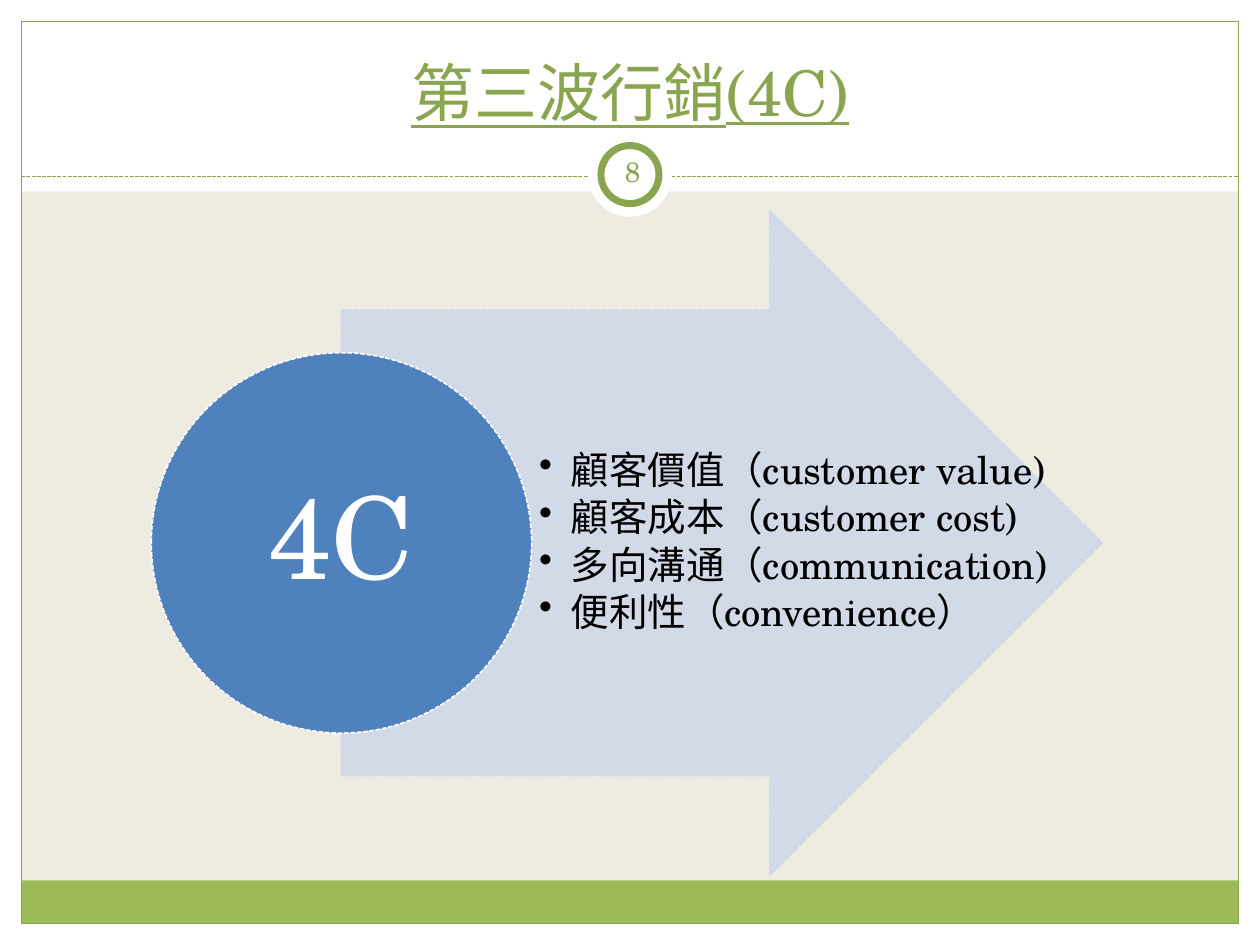
from lxml import etree
from pptx import Presentation
from pptx.dml.color import RGBColor
from pptx.enum.dml import MSO_LINE
from pptx.enum.shapes import MSO_CONNECTOR, MSO_SHAPE
from pptx.enum.text import MSO_ANCHOR, MSO_AUTO_SIZE, PP_ALIGN
from pptx.oxml.ns import qn
from pptx.util import Cm, Pt

RECTANGLE, OVAL, ARROW = MSO_SHAPE.RECTANGLE, MSO_SHAPE.OVAL, MSO_SHAPE.RIGHT_ARROW
DASH = MSO_LINE.SQUARE_DOT
CENTER, LEFT = PP_ALIGN.CENTER, PP_ALIGN.LEFT
MIDDLE, BOTTOM = MSO_ANCHOR.MIDDLE, MSO_ANCHOR.BOTTOM

FONT = "TeX Gyre Schola"
WIDTH, HEIGHT, MARGIN = 25.4, 19.05, 0.43
COLORS = {
    "paper": "EEECE1",
    "white": "FFFFFF",
    "band": "9BBB59",
    "accent": "89A54F",
    "arrow": "D0D8E8",
    "circle": "4F81BD",
    "text": "000000",
}
ITEMS = [
    "顧客價值（customer value)",
    "顧客成本（customer cost)",
    "多向溝通（communication)",
    "便利性（convenience）",
]


def color(name):
    return RGBColor.from_string(COLORS[name])


def lengths(box):
    return [Cm(value) for value in box]


def set_line(line, name, width, dash=None):
    line.color.rgb = color(name)
    line.width = Pt(width)
    if dash:
        line.dash_style = dash


def add_part(page, kind, box, fill=None, line=None):
    """Add a preset shape; line holds colour name, width and optional dash."""
    part = page.shapes.add_shape(kind, *lengths(box))
    part.shadow.inherit = False
    if fill:
        part.fill.solid()
        part.fill.fore_color.rgb = color(fill)
    else:
        part.fill.background()
    if line:
        set_line(part.line, *line)
    else:
        part.line.fill.background()
    return part


def write(shape, lines, size, ink, align=CENTER, anchor=MIDDLE,
          insets=(0.13, 0.13, 0.13, 0.13), underline=None, spacing=None, after=None):
    frame = shape.text_frame
    frame.text = "\n".join(lines)
    sides = ("margin_left", "margin_top", "margin_right", "margin_bottom")
    frame_format = dict(zip(sides, lengths(insets)), word_wrap=True,
                        auto_size=MSO_AUTO_SIZE.NONE, vertical_anchor=anchor)
    for key, value in frame_format.items():
        setattr(frame, key, value)
    para_format = {"alignment": align, "line_spacing": spacing,
                   "space_before": Pt(0), "space_after": after}
    font_format = {"name": FONT, "size": Pt(size), "bold": False, "underline": underline}
    for para in frame.paragraphs:
        for key, value in para_format.items():
            setattr(para, key, value)
        for span in para.runs:
            for key, value in font_format.items():
                setattr(span.font, key, value)
            span.font.color.rgb = color(ink)


def add_bullet(para, indent):
    properties = para._p.get_or_add_pPr()
    properties.set("marL", str(Cm(indent)))
    properties.set("indent", str(-Cm(indent)))
    etree.SubElement(properties, qn("a:buChar")).set("char", "•")


def set_alpha(shape, percent):
    for tint in shape.element.spPr.iter(qn("a:srgbClr")):
        etree.SubElement(tint, qn("a:alpha")).set("val", str(percent * 1000))


def add_frame(page, box):
    """Draw the white margins, the header, the bottom band and the outline."""
    left, top, width, height = box
    right, bottom = left + width, top + height
    for margin in (
        (0, bottom, WIDTH, HEIGHT - bottom),
        (0, 0, WIDTH, 3.86),
        (0, 0, left, HEIGHT),
        (right, 0, WIDTH - right, HEIGHT),
    ):
        add_part(page, RECTANGLE, margin, "white")
    add_part(page, RECTANGLE, (left, bottom - 0.87, width, 0.87), "band")
    add_part(page, RECTANGLE, box, line=("accent", 0.75))


def add_header(page, box, title, number):
    left, top, width, height = box
    rule_top = top + height
    rule = page.shapes.add_connector(
        MSO_CONNECTOR.STRAIGHT, *lengths((left, rule_top, left + width, rule_top)))
    set_line(rule.line, "accent", 0.75, DASH)
    etree.SubElement(rule.element.spPr, qn("a:effectLst"))

    middle, badge_y = left + width / 2, rule_top - 0.04
    for size, line in ((1.7, None), (1.17, ("accent", 4))):
        badge = (middle - size / 2, badge_y - size / 2, size, size)
        add_part(page, OVAL, badge, "white", line)

    heading = page.shapes.title
    heading.left, heading.top, heading.width, heading.height = lengths(
        (left + 0.41, top + 0.2, width - 0.82, 2.11))
    heading.element.getparent().append(heading.element)
    write(heading, [title], 36, "accent", anchor=BOTTOM,
          insets=(0.25, 0.13, 0.25, 0.13), underline=True)
    label = page.shapes.add_textbox(*lengths((middle - 0.58, rule_top - 0.72, 1.27, 1.22)))
    write(label, [number], 16, "accent")


def add_arrow_diagram(page, box, label, items):
    """Place a circle with a label before an arrow that carries the items."""
    left, top, width, height = box
    size = width * 0.4
    arrow_left = left + size / 2
    arrow = add_part(page, ARROW, (arrow_left, top, width - size / 2, height),
                     "arrow", ("arrow", 0.9, DASH))
    arrow.adjustments[0], arrow.adjustments[1] = 0.7, 0.5
    set_alpha(arrow, 90)

    listing = page.shapes.add_textbox(*lengths((left + size, top, width - size, height)))
    write(listing, items, 22, "text", align=LEFT, insets=(0.15, 0.05, 0.08, 0.05),
          spacing=0.9, after=Pt(3.3))
    for para in listing.text_frame.paragraphs:
        add_bullet(para, 0.64)

    circle = add_part(page, OVAL, (left, top + (height - size) / 2, size, size),
                      "circle", ("white", 0.9, DASH))
    write(circle, [label], 65, "white", spacing=0.9)


def main():
    deck = Presentation()
    deck.slide_width, deck.slide_height = Cm(WIDTH), Cm(HEIGHT)
    page = deck.slides.add_slide(deck.slide_layouts[5])
    page.background.fill.solid()
    page.background.fill.fore_color.rgb = color("paper")

    inner_width = WIDTH - 2 * MARGIN
    add_frame(page, (MARGIN, MARGIN, inner_width, HEIGHT - 2 * MARGIN))
    add_header(page, (MARGIN, MARGIN, inner_width, 3.13), "第三波行銷(4C)", "8")
    add_arrow_diagram(page, (3.05, 4.24, 19.17, 13.41), "4C", ITEMS)
    deck.save("out.pptx")


if __name__ == "__main__":
    main()
